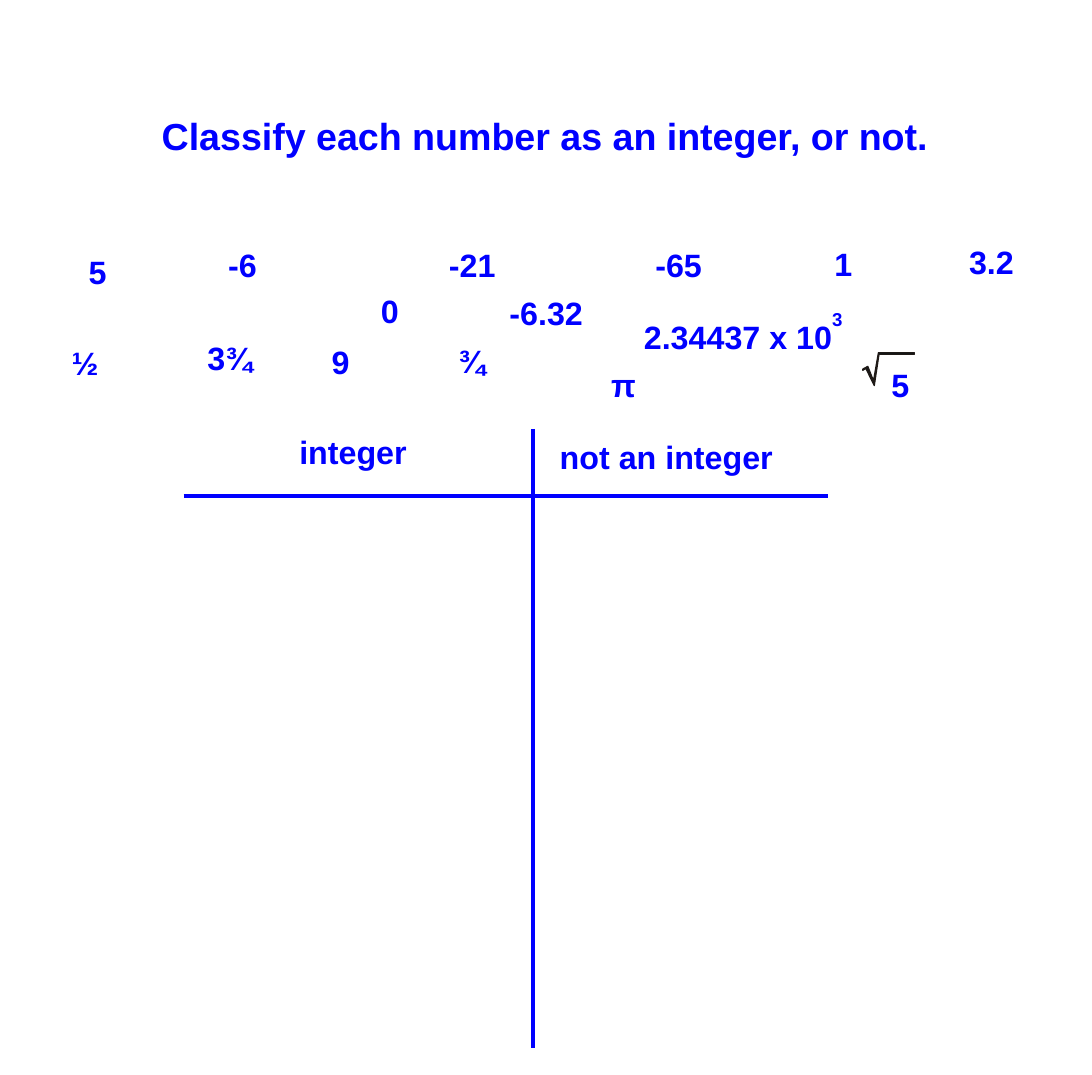
from dataclasses import dataclass

from lxml.etree import SubElement
from pptx import Presentation
from pptx.dml.color import RGBColor
from pptx.enum.shapes import MSO_CONNECTOR
from pptx.enum.text import MSO_ANCHOR, MSO_AUTO_SIZE, PP_ALIGN
from pptx.oxml.ns import qn
from pptx.util import Cm, Inches, Pt


@dataclass(frozen=True)
class Theme:
    font: str = "Arial"
    paper: RGBColor = RGBColor(0xFF, 0xFF, 0xFF)
    blue: RGBColor = RGBColor(0x00, 0x00, 0xFF)
    ink: RGBColor = RGBColor(0x13, 0x15, 0x16)
    ink_edge: RGBColor = RGBColor(0x1F, 0x1A, 0x17)
    title_size: Pt = Pt(28)
    text_size: Pt = Pt(24)
    rule_width: Pt = Pt(3)
    edge_width: Pt = Pt(1)


THEME = Theme()
LINE_HEIGHT = 1.27

# Text, left, top and width in cm, relative to the number area
NUMBERS = [
    ("5", 0.45, 0.28, 1.04),
    ("-6", 4.11, 0.1, 1.4),
    ("0", 8.12, 1.3, 0.86),
    ("-21", 9.91, 0.1, 1.8),
    ("-65", 15.33, 0.1, 2.36),
    ("1", 20.03, 0.05, 1.73),
    ("3.2", 23.57, 0.01, 2.08),
    ("-6.32", 11.5, 1.35, 2.87),
    ("9", 6.83, 2.64, 1.3),
    ("2.34437 x 10^3", 15.03, 1.73, 5.84),
    ("½", 0, 2.67, 1.5),
    ("¾", 10.16, 2.6, 1.55),
    ("3¾", 3.57, 2.54, 2.44),
    ("π", 14.17, 3.25, 1.14),
]

# Outlines of the root sign in cm, relative to its corner
ROOT_TICK = [(0.43, 0), (0.3, 0.86), (0.08, 0.41), (0, 0.46),
             (0, 0.43), (0.13, 0.36), (0.28, 0.74), (0.41, 0)]
ROOT_BAR = [(0.41, 0), (1.36, 0), (1.36, 0.04), (0.41, 0.04)]


def write(box, text, size, align=PP_ALIGN.LEFT):
    """Fill a text shape; what follows a caret is raised."""
    frame = box.text_frame
    frame_format = {
        "word_wrap": True, "auto_size": MSO_AUTO_SIZE.SHAPE_TO_FIT_TEXT,
        "vertical_anchor": MSO_ANCHOR.TOP,
        "margin_left": Cm(0.25), "margin_right": Cm(0.25),
        "margin_top": Cm(0.13), "margin_bottom": Cm(0.13),
    }
    for name, value in frame_format.items():
        setattr(frame, name, value)
    para = frame.paragraphs[0]
    para.alignment = align
    base, _, exponent = text.partition("^")
    for part in filter(None, (base, exponent)):
        span = para.add_run()
        span.text = part
        for name, value in {"name": THEME.font, "size": size, "bold": True}.items():
            setattr(span.font, name, value)
        span.font.color.rgb = THEME.blue
        if part is exponent:
            span._r.get_or_add_rPr().set("baseline", "70000")


def add_label(page, text, left, top, width):
    box = page.shapes.add_textbox(Cm(left), Cm(top), Cm(width), Cm(LINE_HEIGHT))
    write(box, text, THEME.text_size)


def add_rule(page, x1, y1, x2, y2):
    rule = page.shapes.add_connector(
        MSO_CONNECTOR.STRAIGHT, Cm(x1), Cm(y1), Cm(x2), Cm(y2))
    rule.line.color.rgb = THEME.blue
    rule.line.width = THEME.rule_width
    SubElement(rule._element.spPr, qn("a:effectLst"))


def add_title(page, left, top, width, height):
    title = page.shapes.title
    placement = {"left": left, "top": top, "width": width, "height": height}
    for name, value in placement.items():
        setattr(title, name, Cm(value))
    write(title, "Classify each number as an integer, or not.",
          THEME.title_size, PP_ALIGN.CENTER)


def add_numbers(page, left, top):
    for text, x, y, width in NUMBERS:
        add_label(page, text, left + x, top + y, width)


def add_root_of_five(page, left, top):
    for outline in (ROOT_TICK, ROOT_BAR):
        points = [(Cm(left + x), Cm(top + y)) for x, y in outline]
        builder = page.shapes.build_freeform(*points[0])
        builder.add_line_segments(points[1:], close=True)
        stroke = builder.convert_to_shape()
        stroke.shadow.inherit = False
        stroke.fill.solid()
        stroke.fill.fore_color.rgb = THEME.ink
        stroke.line.color.rgb = THEME.ink_edge
        stroke.line.width = THEME.edge_width
    add_label(page, "5", left + 0.5, top + 0.2, 1.3)


def add_sorting_chart(page, left, top, width, height):
    middle = left + 9.18
    header_line = top + 1.77
    add_rule(page, left, header_line, left + width, header_line)
    add_rule(page, middle, top, middle, top + height)
    add_label(page, "integer", left + 2.79, top - 0.03, 5.74)
    add_label(page, "not an integer", middle + 0.45, top + 0.09, 9.12)


def main():
    deck = Presentation()
    # The page is defined in inches
    deck.slide_width, deck.slide_height = Inches(11.29), Inches(11.11)
    page = deck.slides.add_slide(deck.slide_layouts[5])
    page.background.fill.solid()
    page.background.fill.fore_color.rgb = THEME.paper

    # Sorting chart
    add_sorting_chart(page, 4.82, 11.26, 16.92, 16.25)
    # Heading
    add_title(page, 1.58, 2.84, 25.45, 1.45)
    # Numbers to sort
    add_numbers(page, 1.63, 6.22)
    add_root_of_five(page, 22.66, 9.26)

    deck.save("out.pptx")


if __name__ == "__main__":
    main()
